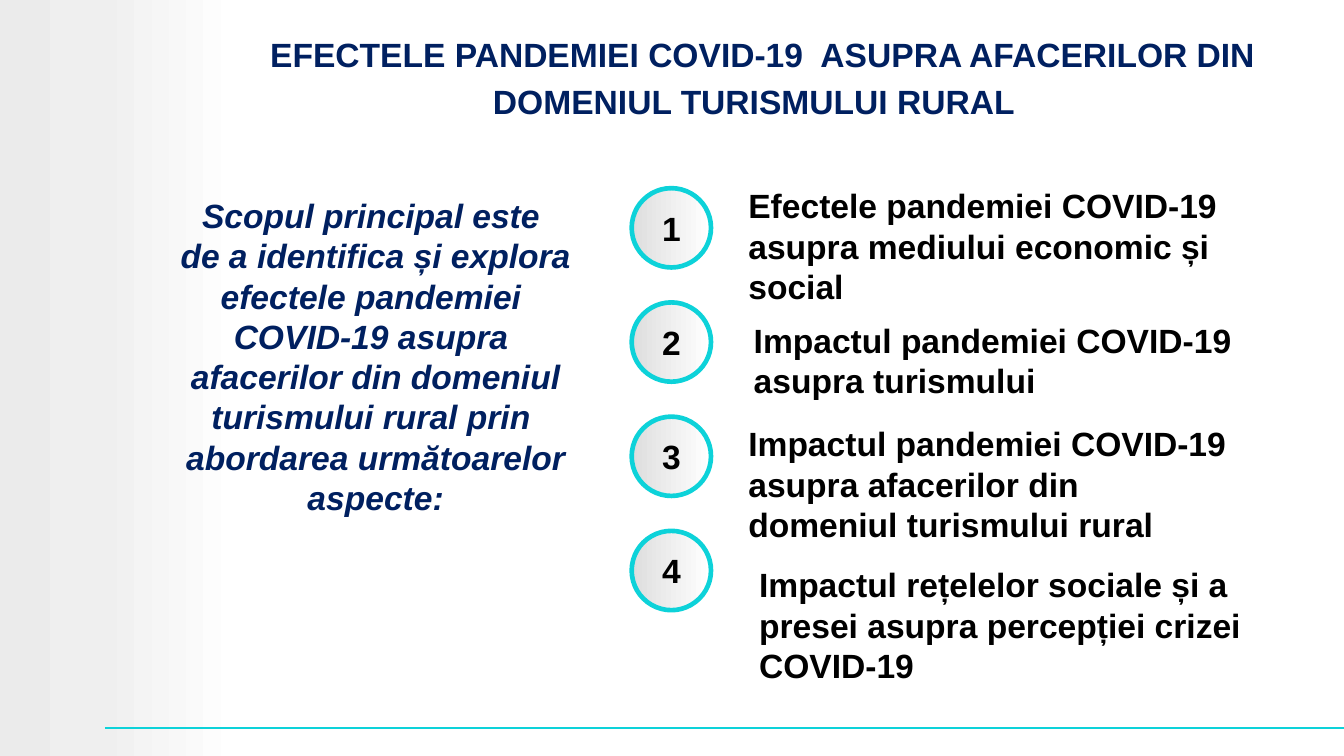
from copy import deepcopy

from pptx import Presentation, util as u
from pptx.dml.color import RGBColor
from pptx.enum import shapes, text
from pptx.oxml.ns import qn

WIDE = 10
HIGH = WIDE * 9 / 16
NAVY, TEAL, BLACK = "002060", "0DD2D9", "000000"
TITLE = ["EFECTELE PANDEMIEI COVID-19  ASUPRA AFACERILOR DIN ",
         "DOMENIUL TURISMULUI RURAL"]
GOAL = ["Scopul principal este ",
        "de a identifica și explora efectele pandemiei ",
        "COVID-19 asupra ",
        "afacerilor din domeniul",
        "turismului rural prin ",
        "abordarea următoarelor aspecte:"]
TOPICS = [
    (5.47, 1.33, 1.01, "Efectele pandemiei COVID-19 asupra mediului economic și social"),
    (5.51, 2.33, 0.71, "Impactul pandemiei COVID-19 asupra turismului"),
    (5.47, 3.1, 1.01, "Impactul pandemiei COVID-19 asupra afacerilor din domeniul turismului rural"),
    (5.55, 4.15, 1.01, "Impactul rețelelor sociale și a presei asupra percepției crizei COVID-19"),
]
BAND = [(0, "EBEBEB"), (42, "EFEFEF"), (100, "FFFFFF")]
DISC = [(0, "DEDEDE"), (100, "FFFFFF")]
LEFT, TOP, SIZE, STEP = 4.7, 1.4, 0.59, 0.85


def tint(code):
    return RGBColor.from_string(code)


def box(*sizes):
    return [u.Inches(size) for size in sizes]


def write(frame, lines, color=BLACK, align="LEFT", italic=False, gap=0):
    """Fill a text frame with one bold paragraph per line."""
    frame.word_wrap = True
    for i, line in enumerate(lines):
        para = frame.add_paragraph() if i else frame.paragraphs[0]
        run = para.add_run()
        run.text = line
        para.alignment = text.PP_ALIGN[align]
        para.space_before = u.Pt(gap if i else 0)
        font = run.font
        font.name, font.size = "Arial", u.Pt(18)
        font.bold, font.italic = True, italic
        font.color.rgb = tint(color)


def label(page, area, lines, **style):
    frame = page.shapes.add_textbox(*box(*area)).text_frame
    write(frame, lines, **style)
    frame.auto_size = text.MSO_AUTO_SIZE.SHAPE_TO_FIT_TEXT


def shade(page, kind, area, stops):
    form = page.shapes.add_shape(kind, *box(*area))
    form.shadow.inherit = False
    form.fill.gradient()
    form.fill.gradient_angle = 0
    items = form._element.spPr.find(qn("a:gradFill")).find(qn("a:gsLst"))
    for _ in stops[2:]:
        items.append(deepcopy(items[0]))
    for stop, (place, code) in zip(form.fill.gradient_stops, stops):
        stop.position = place / 100
        stop.color.rgb = tint(code)
    form.line.fill.background()
    return form


def edge(line, width):
    line.color.rgb = tint(TEAL)
    line.width = u.Pt(width)


def main():
    deck = Presentation()
    deck.slide_width, deck.slide_height = box(WIDE, HIGH)
    page = deck.slides.add_slide(deck.slide_layouts[5])

    shade(page, shapes.MSO_SHAPE.RECTANGLE, (0, 0, 1.77, HIGH), BAND)
    rule = page.shapes.add_connector(shapes.MSO_CONNECTOR.STRAIGHT,
                                     *box(0.78, 5.42, WIDE, 5.42))
    edge(rule.line, 1)
    props = rule._element.spPr
    props.append(props.makeelement(qn("a:effectLst"), {}))

    title = page.shapes.title
    title.left, title.top, title.width, title.height = box(1.22, 0.03, 8.78, 0.85)
    page.shapes._spTree.append(title._element)
    frame = title.text_frame
    frame.auto_size = text.MSO_AUTO_SIZE.NONE
    frame.vertical_anchor = text.MSO_ANCHOR.TOP
    frame.margin_top, frame.margin_bottom = box(0.22, 0)
    write(frame, TITLE, color=NAVY, align="CENTER", gap=4)
    for para, inset in zip(frame.paragraphs, box(0.2, 0)):
        props = para._p.get_or_add_pPr()
        props.set("marL", str(inset))
        props.set("indent", "0")

    label(page, (1.22, 1.4, 3.15, 2.52), GOAL, color=NAVY, align="CENTER", italic=True)
    for i, (left, top, high, topic) in enumerate(TOPICS):
        disc = shade(page, shapes.MSO_SHAPE.OVAL,
                     (LEFT, TOP + i * STEP, SIZE, SIZE), DISC)
        edge(disc.line, 2.5)
        frame = disc.text_frame
        frame.margin_left = frame.margin_right = 0
        frame.margin_top = frame.margin_bottom = 0
        frame.vertical_anchor = text.MSO_ANCHOR.MIDDLE
        write(frame, [str(i + 1)], align="CENTER")
        label(page, (left, top, 3.83, high), [topic])

    deck.save("out.pptx")


if __name__ == "__main__":
    main()
